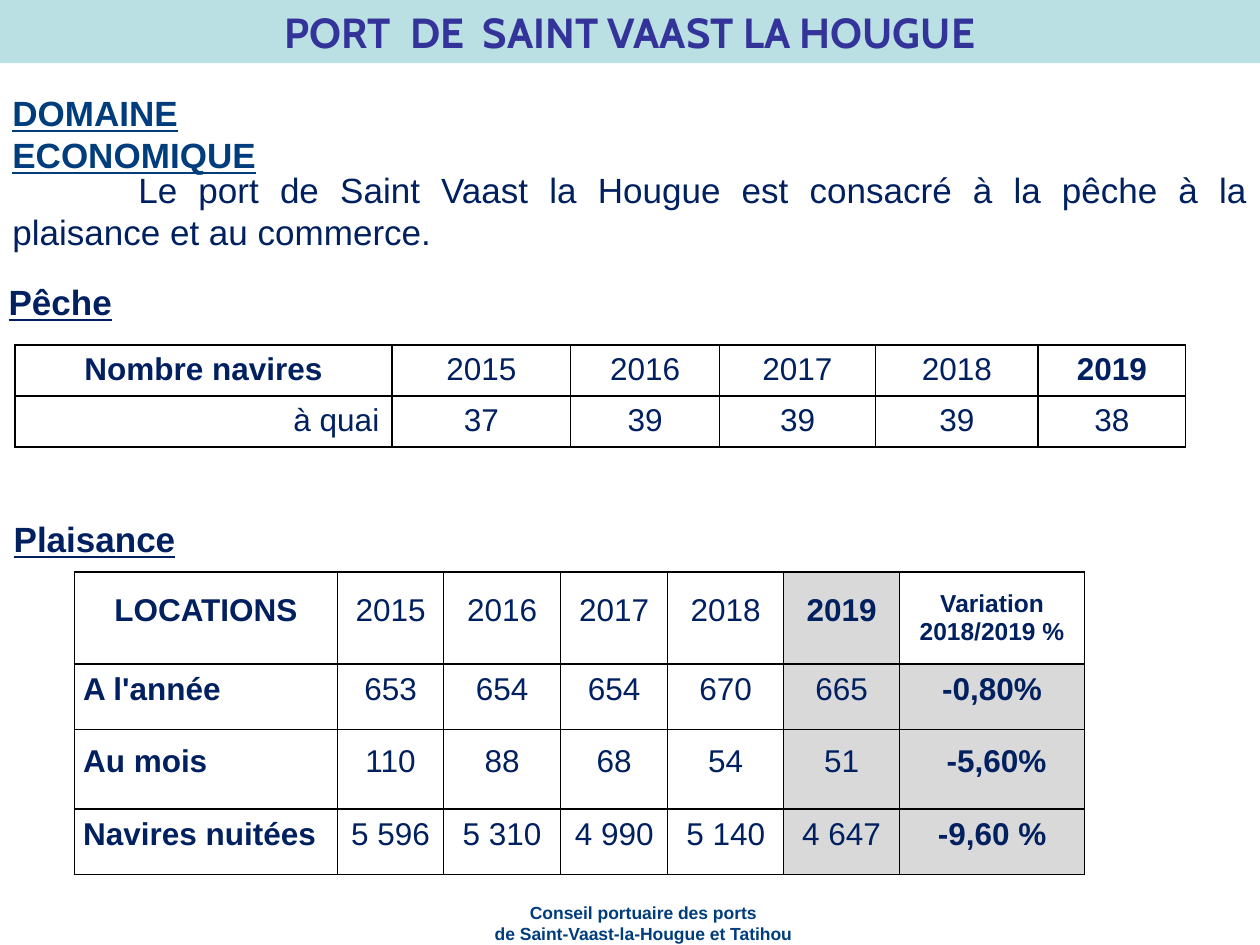
from lxml.etree import SubElement
from pptx import Presentation
from pptx.dml.color import RGBColor
from pptx.enum.text import MSO_ANCHOR, PP_ALIGN
from pptx.oxml.ns import qn
from pptx.util import Inches, Pt

WIDTH, HEIGHT = Inches(10), Inches(7.5)
BAND = RGBColor(0xBB, 0xE0, 0xE3)
VIOLET = RGBColor(0x33, 0x33, 0x99)
BLUE = RGBColor(0x00, 0x3D, 0x7C)
NAVY = RGBColor(0x00, 0x20, 0x60)
GREY = RGBColor(0xD9, 0xD9, 0xD9)

TITLE = {"name": "Cabin", "size": Pt(24), "bold": True}
HEADING = {"name": "Arial", "size": Pt(20), "bold": True, "underline": True}
BODY = {"name": "Arial", "size": Pt(20)}
FOOTER = {"name": "Arial", "size": Pt(10), "bold": True}
CELL = {"name": "Arial", "size": Pt(18), "bold": False}
STRONG = {**CELL, "bold": True}
SMALL = {**STRONG, "size": Pt(14)}

YEARS = ["2015", "2016", "2017", "2018", "2019"]
FISHING = [
    ["Nombre navires", *YEARS],
    ["à quai", "37", "39", "39", "39", "38"],
]
LEISURE = [
    ["LOCATIONS", *YEARS, "Variation\n2018/2019 %"],
    ["A l'année", "653", "654", "654", "670", "665", "-0,80%"],
    ["Au mois", "110", "88", "68", "54", "51", " -5,60%"],
    ["Navires nuitées", "5 596", "5 310", "4 990", "5 140", "4 647", "-9,60 %"],
]


def across(share):
    """Return a length given in percent of the slide width."""
    return round(WIDTH * share / 100)


def down(share):
    """Return a length given in percent of the slide height."""
    return round(HEIGHT * share / 100)


def place(x, y, w, h):
    """Return left, top, width and height from percentages of the slide."""
    return across(x), down(y), across(w), down(h)


def write(tf, text, font, color, align=PP_ALIGN.LEFT, spacing=None):
    """Fill a text frame with paragraphs of one format."""
    tf.text = text
    for p in tf.paragraphs:
        p.alignment = align
        p.line_spacing = spacing
        for r in p.runs:
            for key, value in font.items():
                setattr(r.font, key, value)
            r.font.color.rgb = color


def add_title(s, text):
    """Turn the title placeholder into the band at the top."""
    sp = s.shapes.title
    sp.left, sp.top, sp.width, sp.height = place(0, 0, 100, 6.67)
    sp.fill.solid()
    sp.fill.fore_color.rgb = BAND
    sp.text_frame.vertical_anchor = MSO_ANCHOR.MIDDLE
    write(sp.text_frame, text, TITLE, VIOLET, PP_ALIGN.CENTER)


def add_text(s, box, text, font, color, align=PP_ALIGN.LEFT):
    """Add a wrapping text box and return its text frame."""
    tf = s.shapes.add_textbox(*place(*box)).text_frame
    tf.word_wrap = True
    write(tf, text, font, color, align)
    return tf


def add_borders(cell):
    """Draw thin black lines on the four sides of a cell."""
    tcPr = cell._tc.get_or_add_tcPr()
    for side in ("lnL", "lnR", "lnT", "lnB"):
        ln = SubElement(tcPr, qn(f"a:{side}"), w=str(Pt(1)))
        fill = SubElement(ln, qn("a:solidFill"))
        SubElement(fill, qn("a:srgbClr"), val="000000")


def add_table(s, x, y, cols, rows, data):
    """Add a bordered, unfilled table of centred regular text."""
    box = place(x, y, sum(cols), sum(rows))
    table = s.shapes.add_table(len(rows), len(cols), *box).table
    table.first_row = table.horz_banding = False
    for col, share in zip(table.columns, cols):
        col.width = across(share)
    for row, share, texts in zip(table.rows, rows, data):
        row.height = down(share)
        for cell, text in zip(row.cells, texts):
            add_borders(cell)
            cell.fill.background()
            write(cell.text_frame, text, CELL, NAVY, PP_ALIGN.CENTER)
    return table


def add_fishing_table(s):
    """Add the number of boats at the quay."""
    cols = [29.9, 14.2, 11.8, 12.4, 12.9, 11.7]
    table = add_table(s, 1.2, 36.53, cols, [5.4, 5.4], FISHING)
    for col in (0, 5):
        tf = table.cell(0, col).text_frame
        write(tf, FISHING[0][col], STRONG, NAVY, PP_ALIGN.CENTER)
    table.cell(1, 0).text_frame.paragraphs[0].alignment = PP_ALIGN.RIGHT


def add_leisure_table(s):
    """Add the rentals with the last year and the variation in grey."""
    cols = [20.9, 8.4, 9.3, 8.5, 9.2, 9.2, 14.7]
    rows = [9.73, 6.93, 8.4, 6.93]
    table = add_table(s, 5.9, 60.53, cols, rows, LEISURE)
    margins = {"margin_left": Inches(0.07), "margin_right": Inches(0.07),
               "margin_top": 0, "margin_bottom": 0,
               "vertical_anchor": MSO_ANCHOR.MIDDLE}
    for i, texts in enumerate(LEISURE):
        for j, text in enumerate(texts):
            cell = table.cell(i, j)
            for key, value in margins.items():
                setattr(cell, key, value)
            font = STRONG if j in (0, 6) or (i, j) == (0, 5) else CELL
            align = PP_ALIGN.JUSTIFY if i and j == 0 else PP_ALIGN.CENTER
            write(cell.text_frame, text, font, NAVY, align, Pt(12))
            if j == 5 or (i and j == 6):
                cell.fill.solid()
                cell.fill.fore_color.rgb = GREY
    write(table.cell(0, 6).text_frame, LEISURE[0][6], SMALL, NAVY,
          PP_ALIGN.CENTER)


def main():
    """Build the slide and save it."""
    prs = Presentation()
    prs.slide_width, prs.slide_height = WIDTH, HEIGHT
    s = prs.slides.add_slide(prs.slide_layouts[5])
    add_title(s, "PORT  DE  SAINT VAAST LA HOUGUE")
    add_text(s, (0, 9.07, 23, 10), "DOMAINE ECONOMIQUE", HEADING, BLUE)
    tf = add_text(s, (0, 17.2, 100, 10.27),
                  "Le port de Saint Vaast la Hougue est consacré à la pêche "
                  "à la plaisance et au commerce.",
                  BODY, NAVY, PP_ALIGN.JUSTIFY)
    tf.paragraphs[0]._p.get_or_add_pPr().set("indent", str(across(10)))
    add_text(s, (-0.3, 29.07, 100, 7.6), "Pêche", HEADING, NAVY)
    add_fishing_table(s)
    add_text(s, (0.1, 54.13, 99.9, 7.6), "Plaisance", HEADING, NAVY)
    add_leisure_table(s)
    add_text(s, (35.2, 94.8, 31.7, 4),
             "Conseil portuaire des ports\nde Saint-Vaast-la-Hougue et Tatihou",
             FOOTER, BLUE, PP_ALIGN.CENTER)
    prs.save("out.pptx")


if __name__ == "__main__":
    main()
